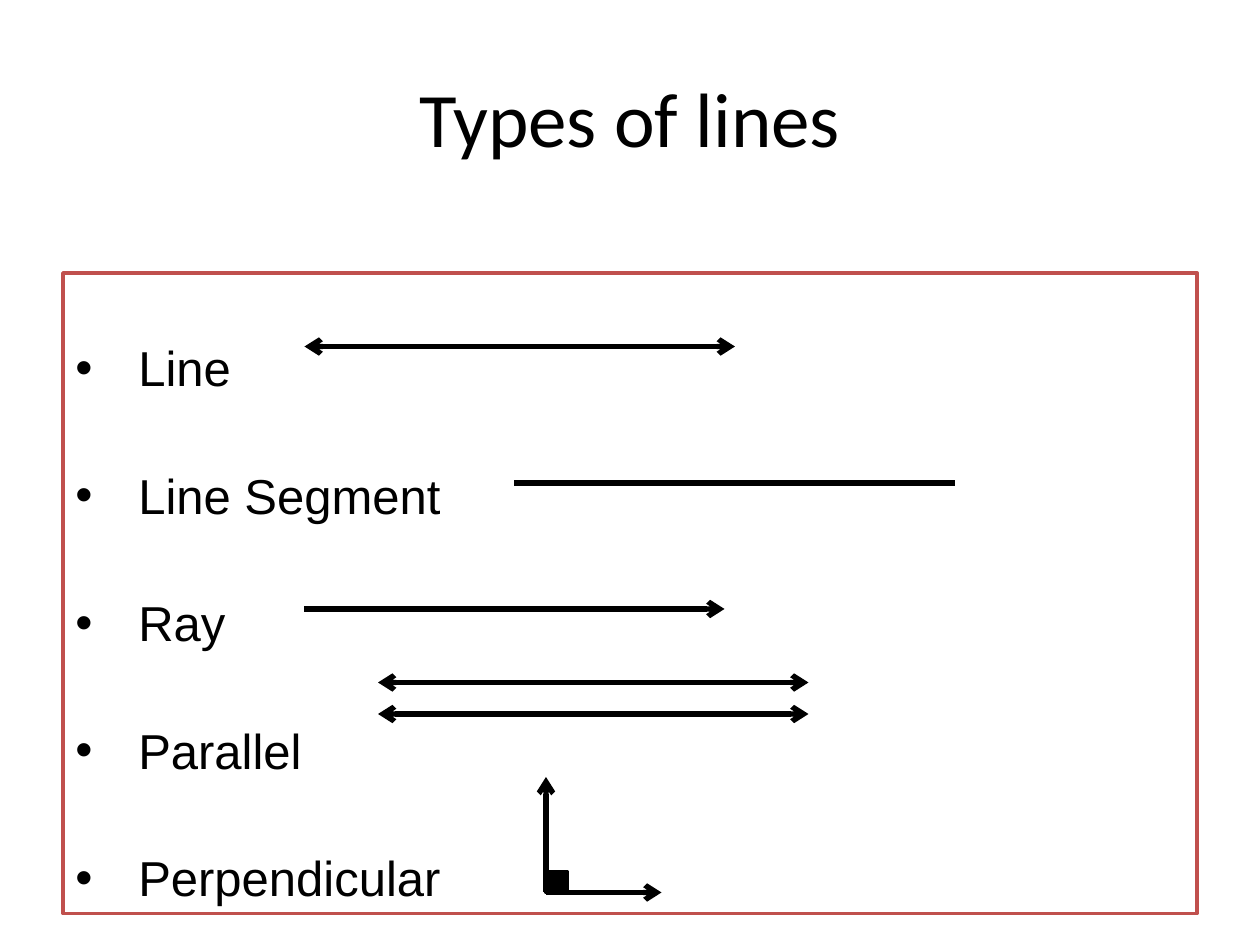
import pptx
import pptx.dml.color
import pptx.enum.shapes
import pptx.enum.text
import pptx.oxml
import pptx.oxml.ns
import pptx.util

BLACK = pptx.dml.color.RGBColor(0x00, 0x00, 0x00)
WHITE = pptx.dml.color.RGBColor(0xFF, 0xFF, 0xFF)
RED = pptx.dml.color.RGBColor(0xC0, 0x50, 0x4D)

EMU_PER_PX = 7620  # 120 px to the inch


def px(length):
    return pptx.util.Emu(length * EMU_PER_PX)


def append_xml(parent, tag, **attributes):
    element = pptx.oxml.parse_xml(f"<a:{tag} {pptx.oxml.ns.nsdecls('a')}/>")
    for name, value in attributes.items():
        element.set(name, value)
    parent.append(element)


class SlideBuilder:
    title_font = "Calibri"
    title_size = 44
    list_font = "Arial"
    list_size = 28
    list_indent = 60
    outline_width = 2
    stroke_width = 3

    def __init__(self, slide):
        self.slide = slide

    def format_runs(self, paragraph, font, size):
        for run in paragraph.runs:
            run.font.name = font
            run.font.size = pptx.util.Pt(size)
            run.font.color.rgb = BLACK

    def title(self, text, left, top, width, height):
        box = self.slide.shapes.add_textbox(px(left), px(top), px(width), px(height))
        frame = box.text_frame
        frame.word_wrap = True
        frame.vertical_anchor = pptx.enum.text.MSO_ANCHOR.MIDDLE
        frame.text = text
        paragraph = frame.paragraphs[0]
        paragraph.alignment = pptx.enum.text.PP_ALIGN.CENTER
        self.format_runs(paragraph, self.title_font, self.title_size)

    def rectangle(self, left, top, width, height, fill, outline):
        shape = self.slide.shapes.add_shape(
            pptx.enum.shapes.MSO_SHAPE.RECTANGLE,
            px(left), px(top), px(width), px(height))
        shape.shadow.inherit = False
        shape.fill.solid()
        shape.fill.fore_color.rgb = fill
        shape.line.color.rgb = outline
        shape.line.width = pptx.util.Pt(self.outline_width)
        return shape

    def bullet_list(self, shape, items):
        frame = shape.text_frame
        frame.word_wrap = True
        frame.vertical_anchor = pptx.enum.text.MSO_ANCHOR.TOP
        frame.text = "\n".join(items)
        for paragraph in frame.paragraphs:
            paragraph.alignment = pptx.enum.text.PP_ALIGN.LEFT
            paragraph.line_spacing = 2.0
            paragraph.space_before = pptx.util.Pt(self.list_size * 0.2)
            properties = paragraph._p.get_or_add_pPr()
            properties.set("marL", str(px(self.list_indent)))
            properties.set("indent", str(-px(self.list_indent)))
            append_xml(properties, "buFont", typeface=self.list_font)
            append_xml(properties, "buChar", char="•")
            self.format_runs(paragraph, self.list_font, self.list_size)

    def line(self, start, end, arrows=()):
        """Draw a straight line; arrows names the ends (headEnd, tailEnd) that get one."""
        connector = self.slide.shapes.add_connector(
            pptx.enum.shapes.MSO_CONNECTOR.STRAIGHT,
            *(px(value) for value in (*start, *end)))
        connector.line.color.rgb = BLACK
        connector.line.width = pptx.util.Pt(self.stroke_width)
        outline = connector.line._get_or_add_ln()
        for arrow in arrows:
            append_xml(outline, arrow, type="arrow")
        append_xml(connector._element.spPr, "effectLst")


def main():
    presentation = pptx.Presentation()
    presentation.slide_width = px(1200)
    presentation.slide_height = px(900)
    builder = SlideBuilder(
        presentation.slides.add_slide(presentation.slide_layouts[6]))

    builder.title("Types of lines", 60, 36, 1080, 150)
    panel = builder.rectangle(60, 260, 1080, 610, WHITE, RED)
    builder.bullet_list(
        panel, ["Line", "Line Segment", "Ray", "Parallel", "Perpendicular"])

    ray = ("tailEnd",)
    both_ends = ("headEnd", "tailEnd")
    builder.line((290, 330), (700, 330), both_ends)
    builder.line((490, 460), (910, 460))
    builder.line((290, 580), (690, 580), ray)
    for y in (650, 680):
        builder.line((360, y), (770, y), both_ends)

    corner_x, corner_y = 520, 850
    marker, arm = 20, 110
    builder.rectangle(corner_x, corner_y - marker, marker, marker, BLACK, BLACK)
    for end in ((corner_x + arm, corner_y), (corner_x, corner_y - arm)):
        builder.line((corner_x, corner_y), end, ray)

    presentation.save("out.pptx")


if __name__ == "__main__":
    main()
